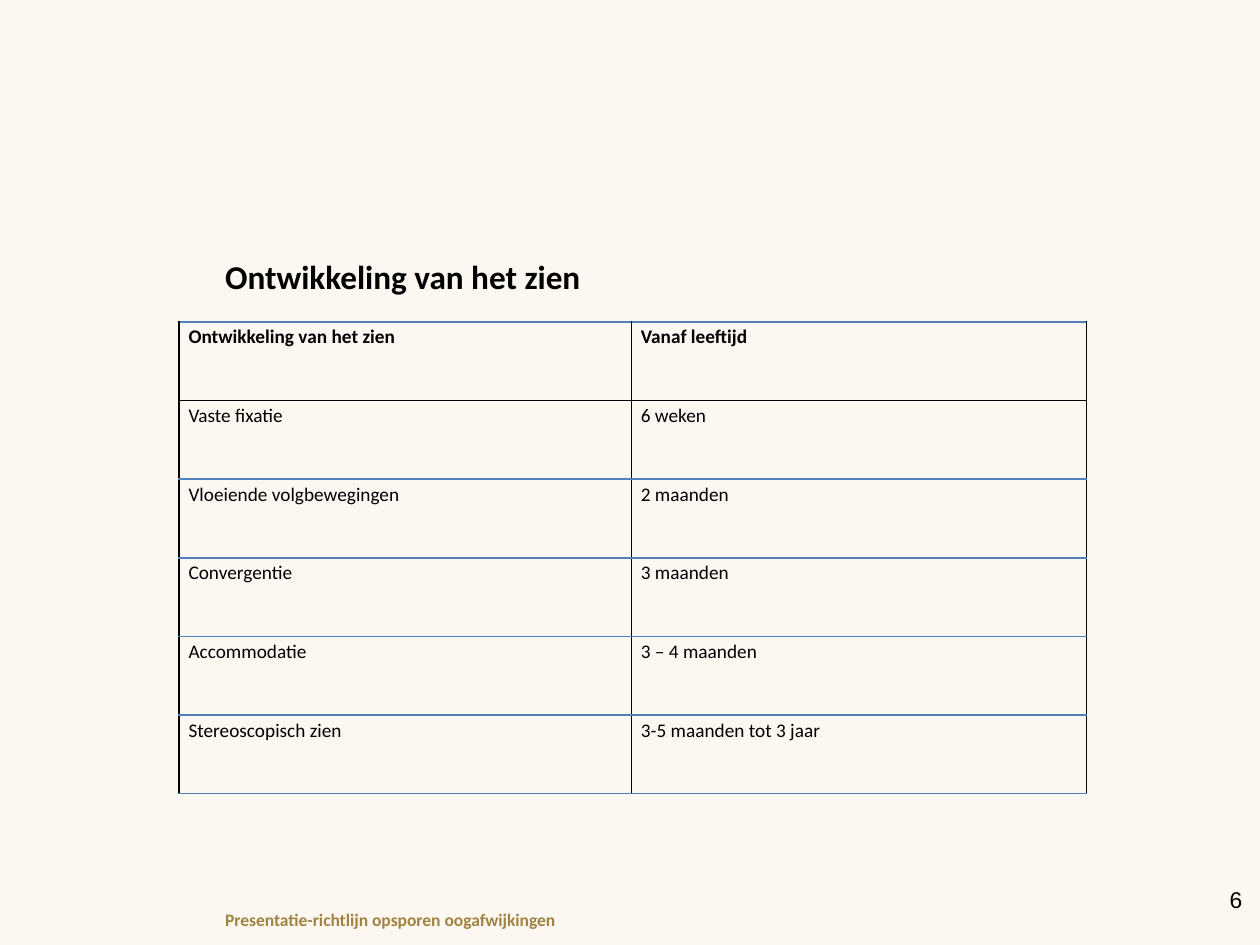
from dataclasses import dataclass

from lxml.etree import SubElement
from pptx import Presentation
from pptx.dml.color import RGBColor as RGB
from pptx.enum.text import MSO_ANCHOR as ANCHOR, PP_ALIGN as ALIGN
from pptx.oxml.ns import qn
from pptx.util import Cm, Pt


@dataclass(frozen=True)
class Theme:
    paper: str = "FCF8F1"
    ink: str = "000000"
    rule: str = "4F81BD"
    gold: str = "A08241"
    title: int = 19
    body: int = 11
    footer: int = 10
    number: int = 13


T = Theme()


def write(tf, text, size, color=T.ink, font="Calibri", bold=False,
          align=ALIGN.LEFT, spacing=1.0, anchor=ANCHOR.TOP):
    tf.word_wrap = True
    tf.vertical_anchor = anchor
    p = tf.paragraphs[0]
    p.alignment = align
    p.line_spacing = spacing
    r = p.add_run()
    r.text = text
    r.font.name = font
    r.font.size = Pt(size)
    r.font.bold = bold
    r.font.color.rgb = RGB.from_string(color)


def set_borders(cell, **colors):
    """Draw 1 pt borders; colors maps L, R, T, B (in that order) to a colour."""
    tc_pr = cell._tc.get_or_add_tcPr()
    for i, (side, color) in enumerate(colors.items()):
        ln = SubElement(tc_pr, qn(f"a:ln{side}"), w=str(Pt(1)))
        fill = SubElement(ln, qn("a:solidFill"))
        SubElement(fill, qn("a:srgbClr"), val=color)
        tc_pr.insert(i, ln)


prs = Presentation()
prs.slide_width, prs.slide_height = Cm(25.4), Cm(19.05)
s = prs.slides.add_slide(prs.slide_layouts[6])
s.background.fill.solid()
s.background.fill.fore_color.rgb = RGB.from_string(T.paper)

# Title
title = s.shapes.add_textbox(Cm(4.29), Cm(5), Cm(19.84), Cm(1.14))
write(title.text_frame, "Ontwikkeling van het zien", T.title, bold=True,
      anchor=ANCHOR.MIDDLE)

# Table of milestones
rows = [
    ("Ontwikkeling van het zien", "Vanaf leeftijd"),
    ("Vaste fixatie", "6 weken"),
    ("Vloeiende volgbewegingen", "2 maanden"),
    ("Convergentie", "3 maanden"),
    ("Accommodatie", "3 – 4 maanden"),
    ("Stereoscopisch zien", "3-5 maanden tot 3 jaar"),
]
col_widths = [Cm(9.12), Cm(9.17)]
row_height = Cm(1.585)
table = s.shapes.add_table(len(rows), 2, Cm(3.61), Cm(6.49),
                           sum(col_widths), row_height * len(rows)).table
table.first_row = table.horz_banding = False
for column, width in zip(table.columns, col_widths):
    column.width = width
for i, row in enumerate(rows):
    table.rows[i].height = row_height
    for j, text in enumerate(row):
        cell = table.cell(i, j)
        cell.margin_left = cell.margin_right = Cm(0.19)
        cell.margin_top = cell.margin_bottom = 0
        cell.fill.background()
        write(cell.text_frame, text, T.body, bold=i == 0, spacing=1.15)
        set_borders(cell, L=T.ink, R=T.ink,
                    T=T.ink if i == 1 else T.rule,
                    B=T.ink if i == 0 else T.rule)

# Footer and slide number
footer = s.shapes.add_textbox(Cm(4.29), Cm(18.21), Cm(14.33), Cm(0.64))
write(footer.text_frame, "Presentatie-richtlijn opsporen oogafwijkingen",
      T.footer, color=T.gold, bold=True, anchor=ANCHOR.MIDDLE)

number = s.shapes.add_textbox(Cm(23.77), Cm(17.6), Cm(1.52), Cm(1.45))
number.text_frame.margin_top = number.text_frame.margin_bottom = Cm(0.25)
write(number.text_frame, "6", T.number, font="Arial", align=ALIGN.RIGHT)

prs.save("out.pptx")
